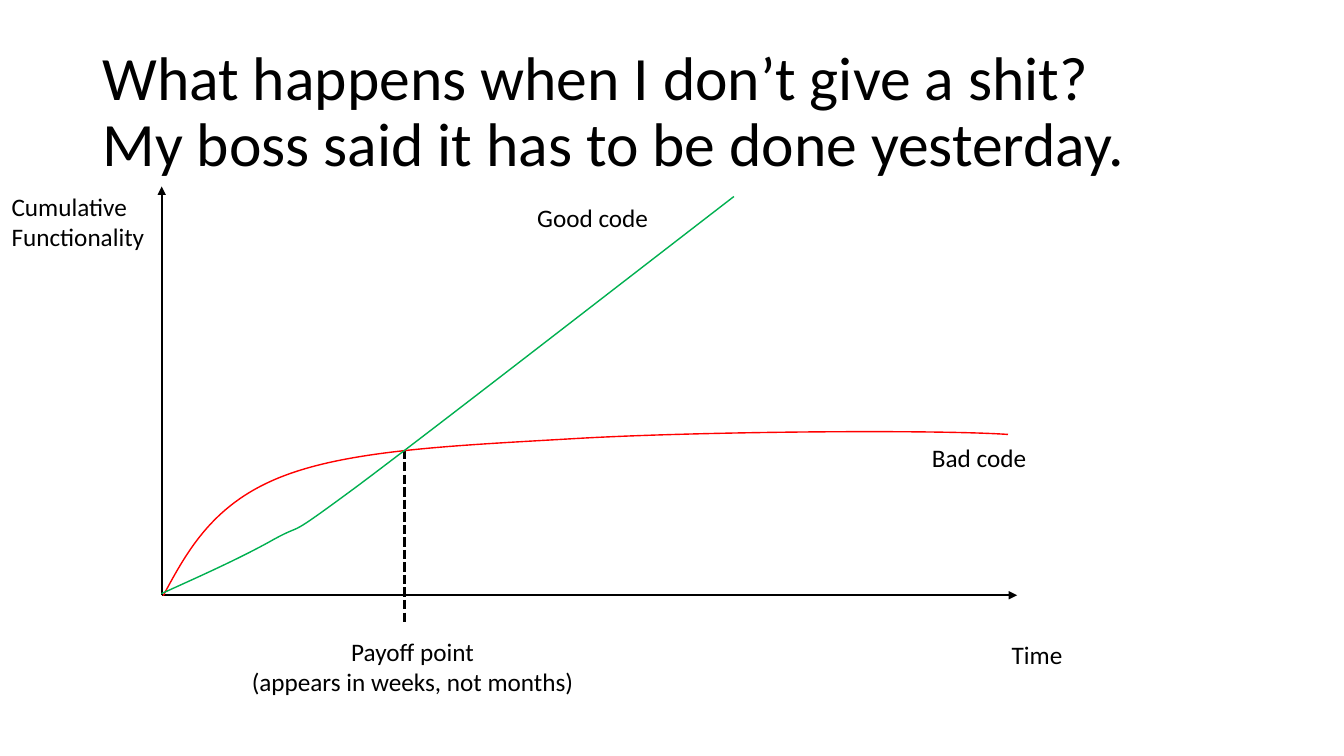
"""Build a slide comparing cumulative functionality of good and bad code over time."""
from lxml import etree
from pptx import Presentation
from pptx.dml.color import RGBColor
from pptx.enum.dml import MSO_LINE
from pptx.enum.shapes import MSO_CONNECTOR
from pptx.enum.text import MSO_ANCHOR, MSO_AUTO_SIZE, PP_ALIGN
from pptx.oxml.ns import qn
from pptx.util import Pt

BLACK = RGBColor(0x00, 0x00, 0x00)
RED = RGBColor(0xFF, 0x00, 0x00)
GREEN = RGBColor(0x00, 0xB0, 0x50)
STRAIGHT = MSO_CONNECTOR.STRAIGHT
DASH = MSO_LINE.SQUARE_DOT
MIDDLE = MSO_ANCHOR.MIDDLE
NO_FIT, GROW = MSO_AUTO_SIZE.NONE, MSO_AUTO_SIZE.SHAPE_TO_FIT_TEXT
LEFT, CENTER = PP_ALIGN.LEFT, PP_ALIGN.CENTER


def write(tf, lines, size, align):
    tf.text = lines
    for p in tf.paragraphs:
        p.alignment = align
        for r in p.runs:
            for key, value in {"name": "Calibri", "size": Pt(size)}.items():
                setattr(r.font, key, value)
            r.font.color.rgb = BLACK


def smooth_path(sp):
    segments = list(sp._element.iter(qn("a:lnTo")))
    for i in range(0, len(segments), 3):
        curve = etree.Element(qn("a:cubicBezTo"))
        segments[i].addprevious(curve)
        for segment in segments[i:i + 3]:
            curve.append(segment[0])
            segment.getparent().remove(segment)


prs = Presentation()
prs.slide_width, prs.slide_height = Pt(960), Pt(540)
s = prs.slides.add_slide(prs.slide_layouts[5])

title = s.shapes.title
for key, value in {"left": 66, "top": 28.75, "width": 828, "height": 104.4}.items():
    setattr(title, key, Pt(value))
tf = title.text_frame
for key, value in {"word_wrap": True, "auto_size": NO_FIT, "vertical_anchor": MIDDLE}.items():
    setattr(tf, key, value)
write(tf, "What happens when I don’t give a shit?\vMy boss said it has to be done yesterday.", 44, LEFT)
tf.paragraphs[0].line_spacing = 0.9

lines = [
    (115.5, 425.2, 115.5, 133.2, 1.5, None),
    (115.5, 425.2, 726.5, 425.2, 1.5, None),
    (289.1, 321.1, 289.1, 445, 2.25, DASH),
]
for x1, y1, x2, y2, width, dash in lines:
    cxn = s.shapes.add_connector(STRAIGHT, Pt(x1), Pt(y1), Pt(x2), Pt(y2))
    cxn.line.color.rgb = BLACK
    cxn.line.width = Pt(width)
    if dash:
        cxn.line.dash_style = dash
    else:
        etree.SubElement(cxn.line._get_or_add_ln(), qn("a:tailEnd"), type="triangle")
    etree.SubElement(cxn._element.spPr, qn("a:effectLst"))

curves = [
    (RED, [(116.6, 425.5), (134.6, 391.7), (153.4, 358.6), (203, 339.8),
           (252, 321.1), (326.2, 318.2), (411.8, 313.2),
           (498.2, 308.2), (666.7, 306.7), (720, 310.3)]),
    (GREEN, [(115.2, 424.1), (144, 411.1), (172.8, 398.2), (195.8, 385.2),
             (219.6, 372.2), (200.9, 387.4), (255.6, 347),
             (310.3, 306), (416.9, 223.2), (524.2, 140.4)]),
]
for color, knots in curves:
    start, *points = [(Pt(x), Pt(y)) for x, y in knots]
    builder = s.shapes.build_freeform(*start)
    builder.add_line_segments(points, close=False)
    sp = builder.convert_to_shape()
    smooth_path(sp)
    sp.shadow.inherit = False
    sp.fill.background()
    sp.line.color.rgb = color
    sp.line.width = Pt(1)

labels = [
    ("Time", 715.5, 452.9, 51.1, 29, LEFT),
    ("Cumulative\nFunctionality", 1.2, 133.2, 110.2, 51, LEFT),
    ("Bad code", 658.6, 312.5, 82.8, 29, LEFT),
    ("Good code", 376.6, 140.8, 95, 29, LEFT),
    ("Payoff point\n(appears in weeks, not months)", 171.2, 450.7, 247, 51, CENTER),
]
for text, x, y, w, h, align in labels:
    tf = s.shapes.add_textbox(Pt(x), Pt(y), Pt(w), Pt(h)).text_frame
    tf.word_wrap = False
    tf.auto_size = GROW
    write(tf, text, 18, align)

prs.save("out.pptx")
